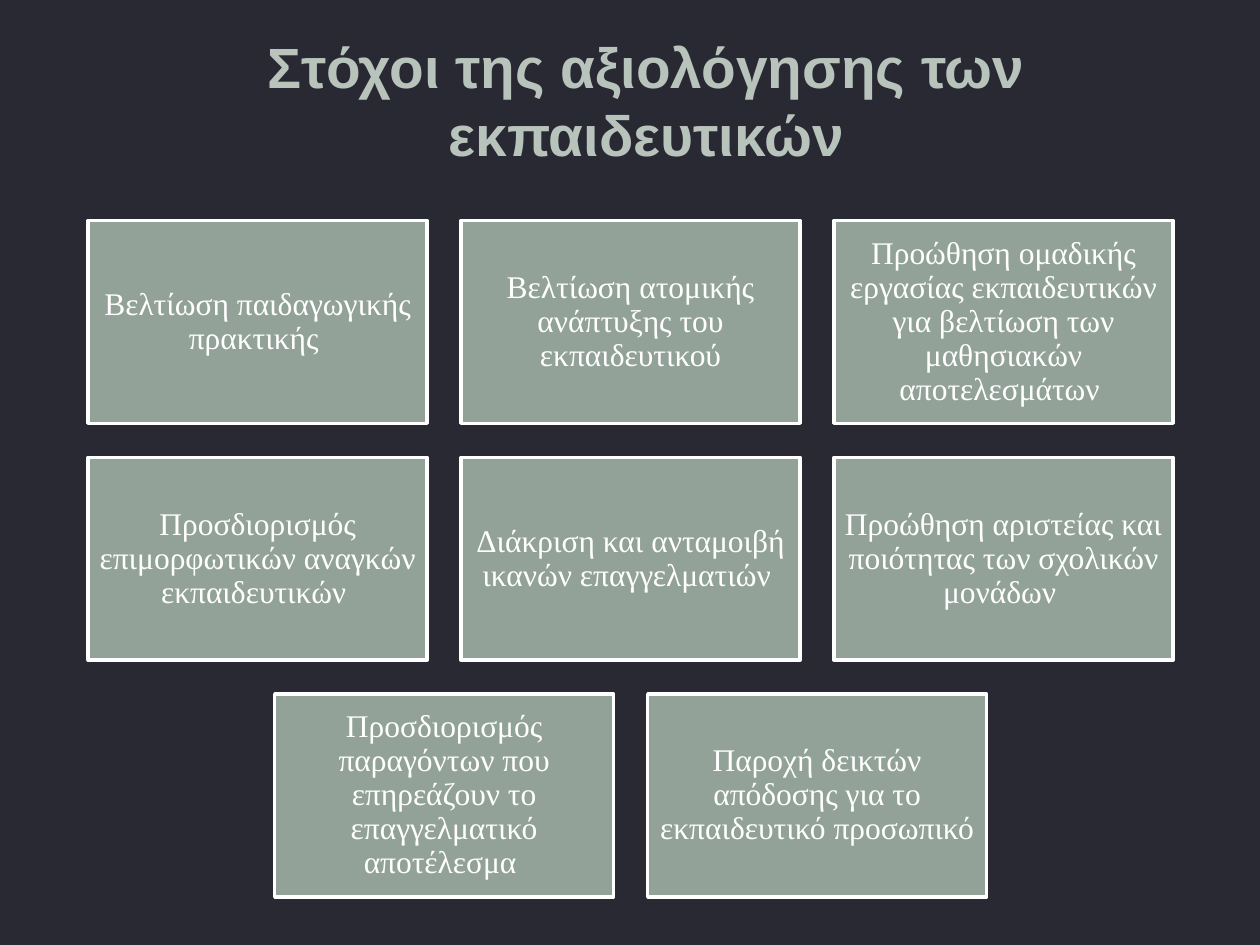
from pptx import Presentation
from pptx import util as u
from pptx.dml.color import RGBColor
from pptx.enum import shapes, text

NIGHT = RGBColor(0x29, 0x29, 0x34)
MIST = RGBColor(0xB7, 0xC3, 0xBB)
SAGE = RGBColor(0x93, 0xA2, 0x99)
WHITE = RGBColor(0xFF, 0xFF, 0xFF)

HEADING = "Στόχοι της αξιολόγησης των εκπαιδευτικών"
GOALS = [
    "Βελτίωση παιδαγωγικής πρακτικής ",
    "Βελτίωση ατομικής ανάπτυξης του εκπαιδευτικού",
    "Προώθηση ομαδικής εργασίας εκπαιδευτικών για βελτίωση των μαθησιακών αποτελεσμάτων ",
    "Προσδιορισμός επιμορφωτικών αναγκών εκπαιδευτικών ",
    "Διάκριση και ανταμοιβή ικανών επαγγελματιών ",
    "Προώθηση αριστείας και ποιότητας των σχολικών μονάδων ",
    "Προσδιορισμός παραγόντων που επηρεάζουν το επαγγελματικό αποτέλεσμα ",
    "Παροχή δεικτών απόδοσης για το εκπαιδευτικό προσωπικό ",
]


class GoalSlide:
    COLUMNS = 3
    LEFT, TOP = 0.7, 1.75
    CARD_WIDTH, CARD_HEIGHT = 2.69, 1.61
    GAP = 0.27

    def __init__(self, deck):
        self.slide = deck.slides.add_slide(deck.slide_layouts[5])
        self.slide.background.fill.solid()
        self.slide.background.fill.fore_color.rgb = NIGHT

    def wording(self, frame, words, font_name, size, color, bold=False):
        frame.text = words
        frame.word_wrap = True
        frame.auto_size = text.MSO_AUTO_SIZE.NONE
        frame.vertical_anchor = text.MSO_ANCHOR.MIDDLE
        paragraph = frame.paragraphs[0]
        paragraph.alignment = text.PP_ALIGN.CENTER
        paragraph.font.name = font_name
        paragraph.font.size = u.Pt(size)
        paragraph.font.bold = bold
        paragraph.font.color.rgb = color
        return paragraph

    def title(self, words):
        heading = self.slide.shapes.title
        heading.left, heading.top = u.Inches(0.67), u.Inches(0.25)
        heading.width, heading.height = u.Inches(8.92), u.Inches(1.08)
        self.wording(heading.text_frame, words, "Arial", 32.4, MIST, bold=True)

    def card(self, words, column, row):
        card = self.slide.shapes.add_shape(
            shapes.MSO_SHAPE.RECTANGLE,
            u.Inches(self.LEFT + column * (self.CARD_WIDTH + self.GAP)),
            u.Inches(self.TOP + row * (self.CARD_HEIGHT + self.GAP)),
            u.Inches(self.CARD_WIDTH),
            u.Inches(self.CARD_HEIGHT),
        )
        card.shadow.inherit = False
        card.fill.solid()
        card.fill.fore_color.rgb = SAGE
        card.line.color.rgb = WHITE
        card.line.width = u.Pt(2)
        frame = card.text_frame
        frame.margin_left = frame.margin_right = u.Inches(0.07)
        frame.margin_top = frame.margin_bottom = u.Inches(0.07)
        goal = self.wording(frame, words, "Times New Roman", 18, WHITE)
        goal.line_spacing = 0.9

    def cards(self, goals):
        for start in range(0, len(goals), self.COLUMNS):
            row_goals = goals[start:start + self.COLUMNS]
            indent = (self.COLUMNS - len(row_goals)) / 2
            for column, goal in enumerate(row_goals):
                self.card(goal, indent + column, start // self.COLUMNS)


def main():
    deck = Presentation()
    deck.slide_width, deck.slide_height = u.Inches(10), u.Inches(7.5)
    goal_slide = GoalSlide(deck)
    goal_slide.title(HEADING)
    goal_slide.cards(GOALS)
    deck.save("out.pptx")


if __name__ == "__main__":
    main()
